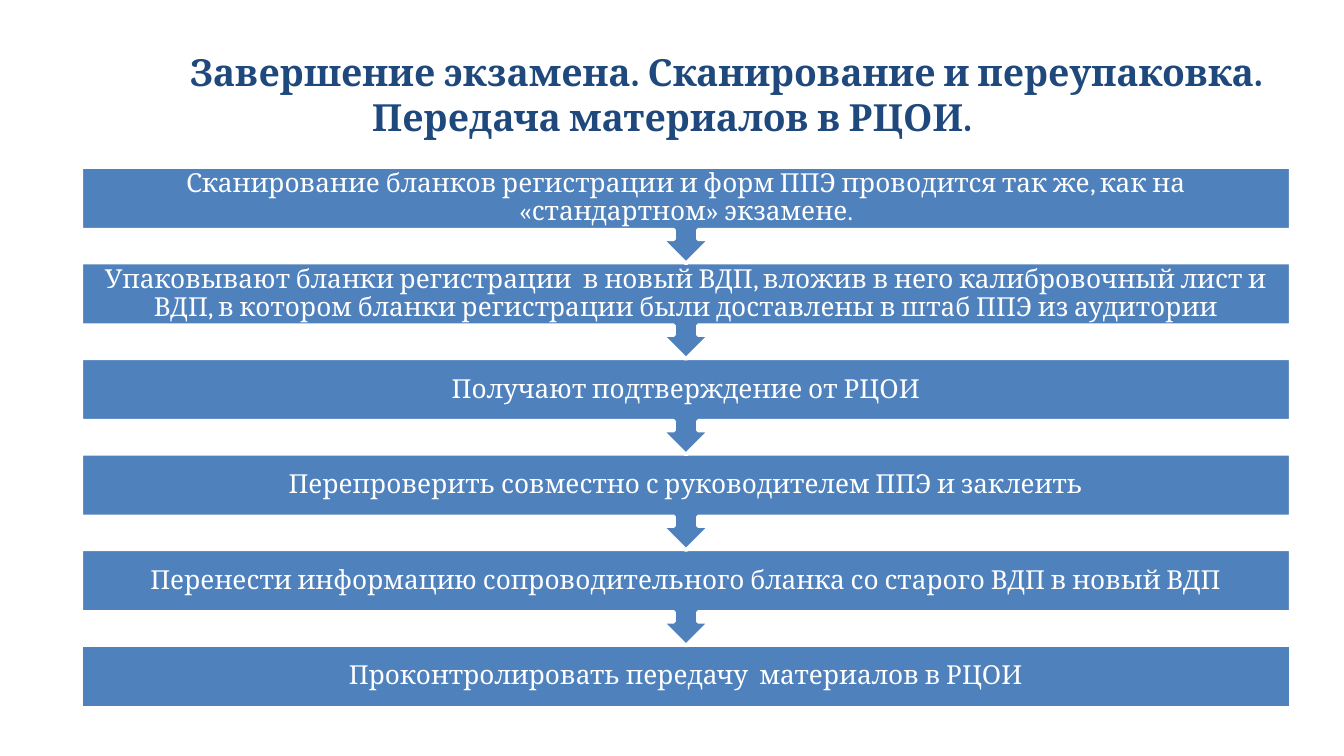
from dataclasses import dataclass

from pptx import Presentation
from pptx.dml.color import RGBColor
from pptx.enum.shapes import MSO_SHAPE as Shape
from pptx.enum.text import MSO_ANCHOR as Anchor, PP_ALIGN as Align
from pptx.slide import Slide
from pptx.util import Length, Pt


@dataclass(frozen=True)
class Theme:
    font: str = "Cambria"
    title_color: RGBColor = RGBColor(0x1F, 0x49, 0x7D)
    fill: RGBColor = RGBColor(0x4F, 0x81, 0xBD)
    light: RGBColor = RGBColor(0xFF, 0xFF, 0xFF)
    title_size: Length = Pt(20)
    step_size: Length = Pt(14)
    outline: Length = Pt(2)


@dataclass(frozen=True)
class Step:
    text: str
    top: float
    height: float
    kind: Shape


THEME = Theme()
TITLE = "Завершение экзамена. Сканирование и переупаковка. Передача материалов в РЦОИ."
STEP_TEXTS = [
    "Сканирование бланков регистрации и форм ППЭ проводится так же, как на «стандартном» экзамене.",
    "Упаковывают бланки регистрации  в новый ВДП, вложив в него калибровочный лист и ВДП, "
    "в котором бланки регистрации были доставлены в штаб ППЭ из аудитории",
    "Получают подтверждение от РЦОИ",
    "Перепроверить совместно с руководителем ППЭ и заклеить",
    "Перенести информацию сопроводительного бланка со старого ВДП в новый ВДП",
    "Проконтролировать передачу  материалов в РЦОИ",
]
CONTENT_WIDTH = 648
STEP_LEFT = 43.5
FIRST_TOP = 89.5
PITCH = 51.2
BOX_HEIGHT = 33.6
CALLOUT_HEIGHT = 51.7
TITLE_INDENT = 58


def make_steps(texts: list[str]) -> list[Step]:
    last = len(texts) - 1
    return [
        Step(
            text,
            FIRST_TOP + PITCH * index,
            BOX_HEIGHT if index == last else CALLOUT_HEIGHT,
            Shape.RECTANGLE if index == last else Shape.DOWN_ARROW_CALLOUT,
        )
        for index, text in enumerate(texts)
    ]


def draw_title(page: Slide, text: str) -> None:
    title = page.shapes.title
    title.left, title.top = Pt(36), Pt(16.5)
    title.width, title.height = Pt(CONTENT_WIDTH), Pt(68)
    frame = title.text_frame
    frame.text = text
    frame.word_wrap = True
    frame.vertical_anchor = Anchor.MIDDLE
    frame.margin_left = frame.margin_right = 0
    para = frame.paragraphs[0]
    para.alignment = Align.CENTER
    properties = para._p.get_or_add_pPr()
    properties.set("marL", "0")
    properties.set("indent", str(Pt(TITLE_INDENT)))
    font = para.runs[0].font
    font.name, font.size, font.bold = THEME.font, THEME.title_size, True
    font.color.rgb = THEME.title_color


def draw_step(page: Slide, step: Step) -> None:
    box = page.shapes.add_shape(
        step.kind, Pt(STEP_LEFT), Pt(step.top), Pt(CONTENT_WIDTH), Pt(step.height)
    )
    box.shadow.inherit = False
    box.fill.solid()
    box.fill.fore_color.rgb = THEME.fill
    box.line.color.rgb = THEME.light
    box.line.width = THEME.outline
    frame = box.text_frame
    frame.text = step.text
    frame.word_wrap = True
    frame.vertical_anchor = Anchor.MIDDLE
    frame.margin_left = frame.margin_right = Pt(7.84)
    frame.margin_top = frame.margin_bottom = 0
    para = frame.paragraphs[0]
    para.alignment = Align.CENTER
    para.line_spacing = 0.9
    font = para.runs[0].font
    font.name, font.size = THEME.font, THEME.step_size
    font.color.rgb = THEME.light


def main() -> None:
    deck = Presentation()
    deck.slide_width, deck.slide_height = Pt(720), Pt(405)
    page = deck.slides.add_slide(deck.slide_layouts[5])
    draw_title(page, TITLE)
    for step in reversed(make_steps(STEP_TEXTS)):
        draw_step(page, step)
    deck.save("out.pptx")


if __name__ == "__main__":
    main()
